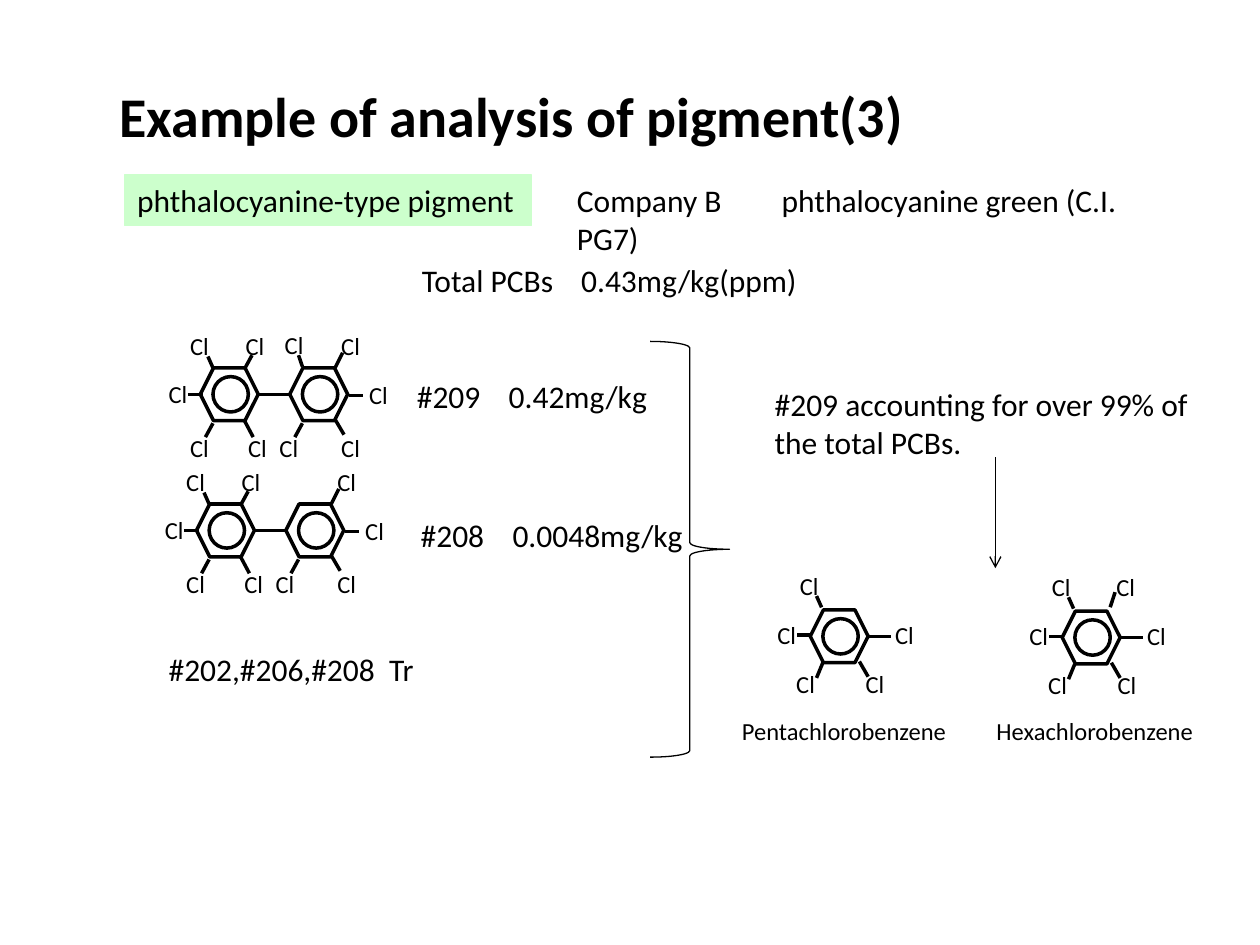
from lxml import etree
from pptx import Presentation
from pptx.dml.color import RGBColor
from pptx.enum.shapes import MSO_CONNECTOR, MSO_SHAPE
from pptx.enum.text import MSO_AUTO_SIZE
from pptx.oxml.ns import qn
from pptx.util import Pt

LINE = MSO_CONNECTOR.STRAIGHT
HEX, OVAL = MSO_SHAPE.HEXAGON, MSO_SHAPE.OVAL
RECT, BRACE = MSO_SHAPE.RECTANGLE, MSO_SHAPE.RIGHT_BRACE
GROW = MSO_AUTO_SIZE.SHAPE_TO_FIT_TEXT
HUES = {"ink": "000000", "mint": "CCFFCC"}
INK = RGBColor.from_string(HUES["ink"])
MINT = RGBColor.from_string(HUES["mint"])


def write(text, x, y, wide, high=28.8, size=18, bold=False, wrap=False,
          tab=None, fill=None, home=None):
    """Place text; tab is the stop in points, fill makes it a filled box."""
    home = home or slide.shapes
    spot = Pt(x), Pt(y), Pt(wide), Pt(high)
    if fill:
        box = home.add_shape(RECT, *spot)
        box.shadow.inherit = False
        box.fill.solid()
        box.fill.fore_color.rgb = box.line.color.rgb = fill
        box.line.width = Pt(0.75)
    else:
        box = home.add_textbox(*spot)
    frame = box.text_frame
    frame.word_wrap = wrap
    frame.auto_size = GROW
    para = frame.paragraphs[0]
    para.alignment = 1
    if tab:
        stops = etree.SubElement(para._p.get_or_add_pPr(), qn("a:tabLst"))
        etree.SubElement(stops, qn("a:tab"), pos=str(Pt(tab)), algn="l")
    run = para.add_run()
    run.text = text
    run.font.name = "Calibri"
    run.font.size = Pt(size)
    run.font.bold = bold
    run.font.color.rgb = INK


def link(home, ends, width=2, arrow=False):
    """Draw a straight line between two points."""
    line = home.add_connector(LINE, *[Pt(n) for n in ends])
    line.line.color.rgb = INK
    line.line.width = Pt(width)
    if arrow:
        etree.SubElement(line.line._get_or_add_ln(), qn("a:tailEnd"), type="arrow")
    etree.SubElement(line._element.spPr, qn("a:effectLst"))


deck = Presentation()
deck.slide_width, deck.slide_height = Pt(720), Pt(540)
slide = deck.slides.add_slide(deck.slide_layouts[6])

write("Example of analysis of pigment(3)", 61.2, 43.2, 466.6, 46, size=32, bold=True)
write("phthalocyanine-type pigment", 71.3, 100.1, 232.6, fill=MINT)
write("Company B\tphthalocyanine green (C.I. PG7)", 322.6, 100.1, 352, wrap=True, tab=117)
write("Total PCBs\t0.43mg/kg(ppm)", 234, 145.4, 231, tab=91)
write("#209\t0.42mg/kg", 231.1, 211.7, 147.6, tab=52.5)
write("#208\t0.0048mg/kg", 233.3, 291.6, 166.3, tab=52.5)
write("#202,#206,#208\tTr", 89.3, 367.9, 156.2, tab=126)
write("#209 accounting for over 99% of the total PCBs.", 435.6, 216.7, 270.7, 51, wrap=True)
write("Pentachlorobenzene", 416.9, 405.4, 132.5, 24.5, size=14)
write("Hexachlorobenzene", 562.3, 405.4, 128.2, 24.5, size=14)

brace = slide.shapes.add_shape(BRACE, Pt(371.5), Pt(195.1), Pt(45.4), Pt(237.6))
brace.shadow.inherit = False
brace.fill.background()
brace.line.color.rgb = INK
brace.line.width = Pt(0.75)
link(slide.shapes, (568.8, 261.4, 568.8, 324.7), width=0.75, arrow=True)

# Bonds by ring corner: line ends, then the corner of the Cl label,
# all measured from the ring's top left
LEFT = {
    "UL": ((4.3, -6.5, 7.2, 0), (-13, -24.5)),
    "UR": ((25.2, 0.7, 29.5, -7.2), (18.7, -24.5)),
    "L": ((-7.2, 15.1, 1.4, 15.1), (-25.2, 2.9)),
    "LL": ((2.9, 39.6, 7.2, 31.7), (-13, 33.8)),
    "LR": ((30.2, 39.6, 25.2, 30.2), (20.2, 33.8)),
}
RIGHT = {
    "UL": ((5, -7.2, 7.2, -0.7), (-10, -25.2)),
    "UR": ((25.9, 0, 30.2, -8.6), (22.3, -24.5)),
    "R": ((33.8, 15.8, 41.8, 15.8), (38.2, 3.6)),
    "LL": LEFT["LL"],
    "LR": ((31, 38.2, 25.9, 29.5), (22.3, 33.8)),
}
LONE = {
    "UL": ((3.6, -7.9, 6.5, -1.4), (-13, -25.6)),
    "UR": ((27.4, -2.2, 30.2, -10.8), (23.8, -25.6)),
    "L": ((-7.5, 14.4, 0.7, 14.4), (-25.9, 2.2)),
    "R": ((33.1, 15.1, 46.1, 15.1), (41.4, 2.2)),
    "LL": ((3.6, 38.9, 7.2, 30.2), (-15.1, 30.2)),
    "LR": ((33.1, 38.2, 28.1, 29.5), (24.5, 30.2)),
}
STEP = 51.1
# Each molecule: left, top, then its rings as (bonds, corner without Cl)
MOLES = [
    (114.5, 210.2, [(LEFT, None), (RIGHT, None)]),
    (112.3, 288, [(LEFT, None), (RIGHT, "UL")]),
    (463, 348.5, [(LONE, "UR")]),
    (607, 349.2, [(LONE, None)]),
]
for left, top, rings in MOLES:
    home = slide.shapes.add_group_shape().shapes
    for i, (bonds, bare) in enumerate(rings):
        x = left + i * STEP
        for kind, dx, dy, wide, high in ((HEX, 0, 0, 33.1, 30.2), (OVAL, 7.2, 5, 20.2, 20.2)):
            ring = home.add_shape(kind, Pt(x + dx), Pt(top + dy), Pt(wide), Pt(high))
            ring.shadow.inherit = False
            ring.fill.background()
            ring.line.color.rgb = INK
            ring.line.width = Pt(2)
        if i:
            link(home, (x - 18, top + 15.1, x + 0.7, top + 15.1))
        for spot, ((x1, y1, x2, y2), (dx, dy)) in bonds.items():
            if spot != bare:
                link(home, (x + x1, top + y1, x + x2, top + y2))
                write("Cl", x + dx, top + dy, 25.2, 24.5, size=14, home=home)

deck.save("out.pptx")
